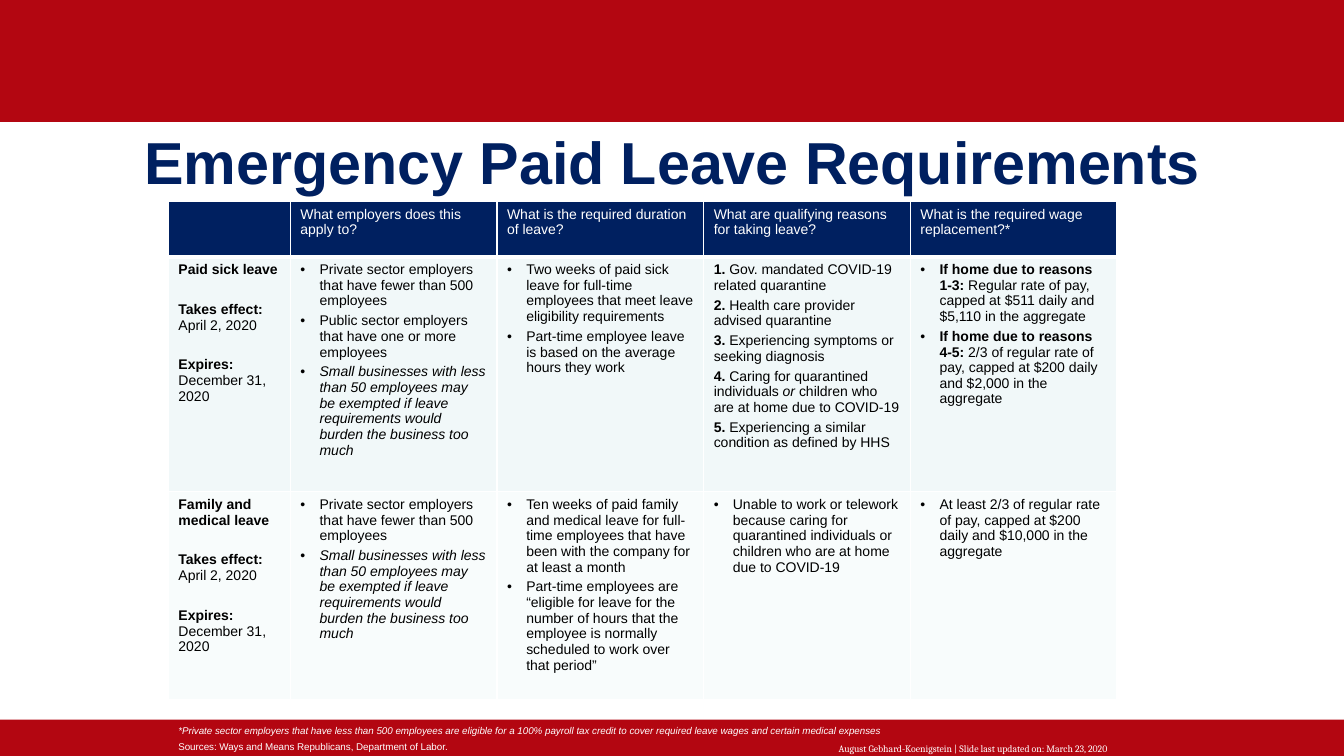
from dataclasses import dataclass

from lxml.etree import SubElement
from pptx import Presentation
from pptx.dml.color import RGBColor
from pptx.enum.shapes import MSO_SHAPE
from pptx.enum.text import MSO_ANCHOR, PP_ALIGN
from pptx.oxml.ns import qn
from pptx.util import Inches, Pt

RED, NAVY, WHITE, BLACK = "B30611", "002060", "FFFFFF", "000000"


@dataclass
class Span:
    text: str
    bold: bool = False
    italic: bool = False


@dataclass
class Para:
    spans: list[Span]
    bullet: bool = False
    before: float = 0


@dataclass
class Label:
    text: str
    left: float
    top: float
    width: float
    height: float
    size: float = 7
    font: str = "Arial"
    color: str = WHITE
    bold: bool = False
    italic: bool = False
    align: PP_ALIGN = PP_ALIGN.LEFT
    anchor: MSO_ANCHOR = MSO_ANCHOR.TOP
    spacing: float = 1.1


def rgb(code: str) -> RGBColor:
    return RGBColor.from_string(code)


def style(run, size: float, font: str, color: str, bold: bool, italic: bool) -> None:
    run.font.size, run.font.name = Pt(size), font
    run.font.color.rgb = rgb(color)
    run.font.bold, run.font.italic = bold, italic


def draw_band(slide, top: float, height: float) -> None:
    band = slide.shapes.add_shape(
        MSO_SHAPE.RECTANGLE, 0, Inches(top), Inches(13.33), Inches(height))
    band.shadow.inherit = False
    band.fill.solid()
    band.fill.fore_color.rgb = rgb(RED)
    band.line.fill.background()


def draw_label(slide, item: Label) -> None:
    box = slide.shapes.add_textbox(Inches(item.left), Inches(item.top),
                                   Inches(item.width), Inches(item.height))
    frame = box.text_frame
    frame.word_wrap = True
    frame.vertical_anchor = item.anchor
    frame.text = item.text
    para = frame.paragraphs[0]
    para.alignment, para.line_spacing = item.align, item.spacing
    style(para.runs[0], item.size, item.font, item.color, item.bold, item.italic)


def add_bullet(para) -> None:
    props = para._p.get_or_add_pPr()
    props.set("marL", str(Inches(0.19)))
    props.set("indent", str(-Inches(0.19)))
    SubElement(props, qn("a:buFont"), typeface="Arial")
    SubElement(props, qn("a:buChar"), char="•")


def add_border(cell, side: str, width: float) -> None:
    line = SubElement(cell._tc.get_or_add_tcPr(), qn(f"a:ln{side}"), w=str(Pt(width)))
    fill = SubElement(line, qn("a:solidFill"))
    SubElement(fill, qn("a:srgbClr"), val=WHITE)


def fill_cell(cell, paras: list[Para], fill: str, color: str, base: float) -> None:
    for side in "LRTB":
        add_border(cell, side, base if side == "B" else 1)
    cell.fill.solid()
    cell.fill.fore_color.rgb = rgb(fill)
    frame = cell.text_frame
    for i, item in enumerate(paras):
        para = frame.add_paragraph() if i else frame.paragraphs[0]
        if item.bullet:
            add_bullet(para)
        para.space_before, para.space_after = Pt(item.before), Pt(3)
        for span in item.spans:
            run = para.add_run()
            run.text = span.text
            style(run, 10, "Arial", color, span.bold, span.italic)


def plain(text: str) -> list[Para]:
    return [Para([Span(text)])] if text else []


def points(*texts: str) -> list[Para]:
    return [Para([Span(text)], bullet=True) for text in texts]


def lead(head: str, text: str, bullet: bool = False, before: float = 0) -> Para:
    return Para([Span(head, bold=True), Span(text)], bullet, before)


def term(name: str) -> list[Para]:
    return [Para([Span(name, bold=True)]),
            lead("Takes effect: ", "April 2, 2020", before=14.25),
            lead("Expires: ", "December 31, 2020", before=14.25)]


# Table content
PRIVATE = "Private sector employers that have fewer than 500 employees"
EXEMPT = Para([Span("Small businesses with less than 50 employees may be exempted if "
                    "leave requirements would burden the business too much",
                    italic=True)], bullet=True)
HEADS = ["", "What employers does this apply to?",
         "What is the required duration of leave?",
         "What are qualifying reasons for taking leave?",
         "What is the required wage replacement?*"]
REASONS = [
    [Span("Gov. mandated COVID-19 related quarantine")],
    [Span("Health care provider advised quarantine")],
    [Span("Experiencing symptoms or seeking diagnosis")],
    [Span("Caring for quarantined individuals "), Span("or ", italic=True),
     Span("children who are at home due to COVID-19")],
    [Span("Experiencing a similar condition as defined by HHS")],
]
SICK = [
    term("Paid sick leave"),
    points(PRIVATE, "Public sector employers that have one or more employees") + [EXEMPT],
    points("Two weeks of paid sick leave for full-time employees that meet leave "
           "eligibility requirements",
           "Part-time employee leave is based on the average hours they work"),
    [Para([Span(f"{n}. ", bold=True)] + spans) for n, spans in enumerate(REASONS, 1)],
    [lead("If home due to reasons 1-3: ",
          "Regular rate of pay, capped at $511 daily and $5,110 in the aggregate", True),
     lead("If home due to reasons 4-5: ",
          "2/3 of regular rate of pay, capped at $200 daily and $2,000 in the aggregate",
          True)],
]
FAMILY = [
    term("Family and medical leave"),
    points(PRIVATE) + [EXEMPT],
    points("Ten weeks of paid family and medical leave for full-time employees that "
           "have been with the company for at least a month",
           "Part-time employees are “eligible for leave for the number of hours that "
           "the employee is normally scheduled to work over that period”"),
    points("Unable to work or telework because caring for quarantined individuals or "
           "children who are at home due to COVID-19"),
    points("At least 2/3 of regular rate of pay, capped at $200 daily and $10,000 in "
           "the aggregate"),
]

# Row content, height, fill, text colour, bottom border
ROWS = [([plain(head) for head in HEADS], 0.55, NAVY, WHITE, 3),
        (SICK, 2.33, "F1F8F9", BLACK, 1),
        (FAMILY, 2.06, "F8FCFC", BLACK, 1)]
WIDTHS = [1.21] + [2.05] * 4

# Title and footer
LABELS = [
    Label("Emergency Paid Leave Requirements", 0, 1.29, 13.33, 0.7, 42.3, color=NAVY,
          bold=True, align=PP_ALIGN.CENTER, anchor=MSO_ANCHOR.MIDDLE, spacing=0.9),
    Label("August Gebhard-Koenigstein | Slide last updated on: March 23, 2020",
          8.22, 7.31, 3.33, 0.37, font="Cambria"),
    Label("Sources: Ways and Means Republicans, Department of Labor.",
          1.67, 7.29, 9.02, 0.21),
    Label("*Private sector employers that have less than 500 employees are eligible for "
          "a 100% payroll tax credit to cover required leave wages and certain medical "
          "expenses", 1.67, 7.13, 7.3, 0.18, italic=True),
]


def draw_table(slide) -> None:
    grid = slide.shapes.add_table(
        len(ROWS), len(WIDTHS), Inches(1.67), Inches(2), Inches(sum(WIDTHS)),
        Inches(sum(row[1] for row in ROWS))).table
    for col, width in zip(grid.columns, WIDTHS):
        col.width = Inches(width)
    for row, (cells, height, fill, color, base) in zip(grid.rows, ROWS):
        row.height = Inches(height)
        for cell, paras in zip(row.cells, cells):
            fill_cell(cell, paras, fill, color, base)


def main() -> None:
    deck = Presentation()
    deck.slide_width, deck.slide_height = Inches(13.33), Inches(7.5)
    slide = deck.slides.add_slide(deck.slide_layouts[6])
    draw_band(slide, 0, 1.21)
    draw_band(slide, 7.14, 0.39)
    draw_table(slide)
    for item in LABELS:
        draw_label(slide, item)
    deck.save("out.pptx")


if __name__ == "__main__":
    main()
